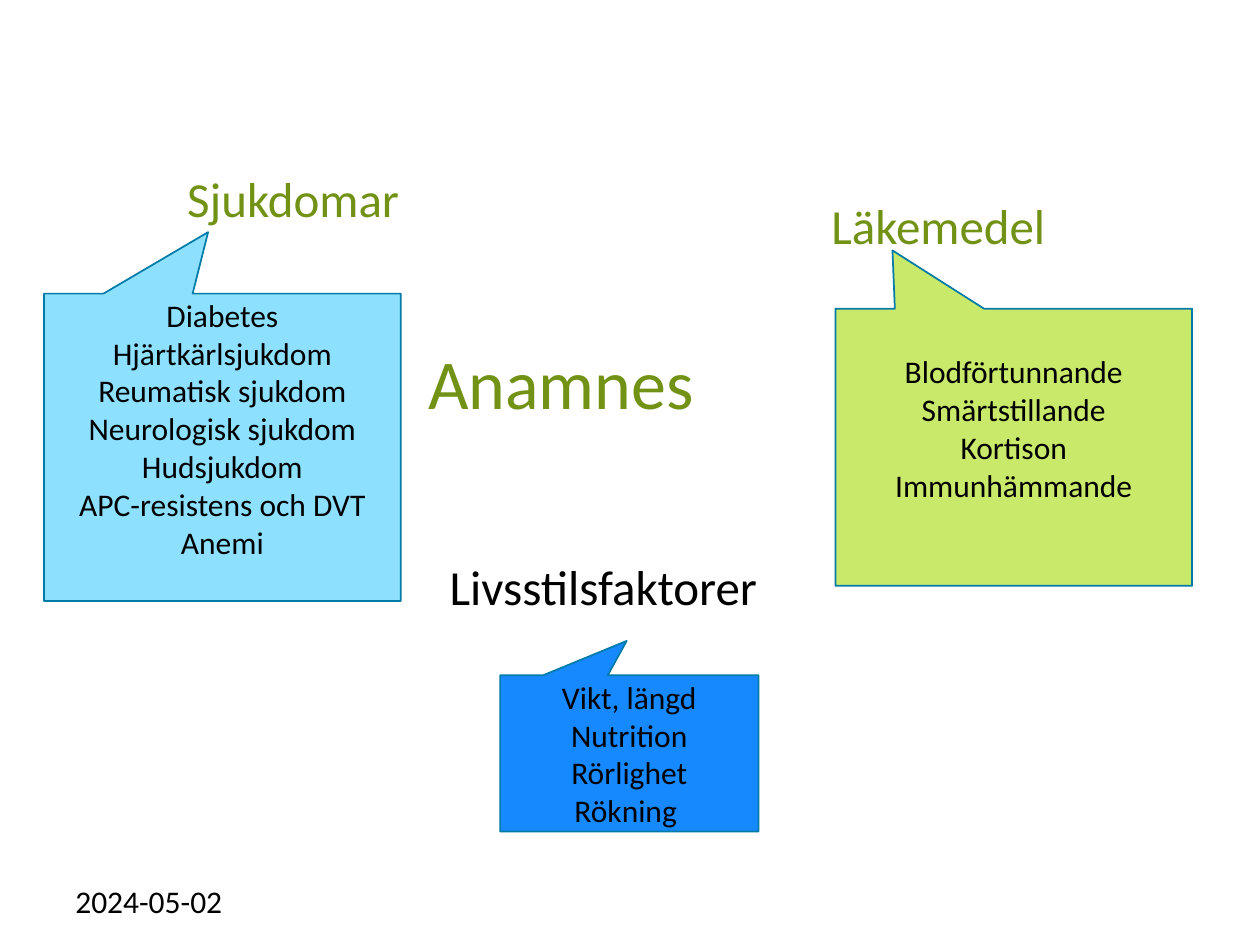
from pptx import Presentation
from pptx.dml.color import RGBColor
from pptx.enum.shapes import MSO_SHAPE
from pptx.enum.text import MSO_ANCHOR, PP_ALIGN
from pptx.util import Pt

COLORS = {
    "olive": "729216",
    "black": "000000",
    "edge": "007BA7",
    "sky": "8DE1FF",
    "lime": "C8E969",
    "blue": "1789FF",
}
FONT = "Calibri"
INSET, LINE = 3.6, 22

LABELS = [
    ("Anamnes", (237.6, 195.8, 232.6, 85), 40, "olive", PP_ALIGN.LEFT, MSO_ANCHOR.TOP, True),
    ("2024-05-02", (36, 500.4, 167.8, 28.8), 18, "black", PP_ALIGN.LEFT, MSO_ANCHOR.TOP, True),
    ("Sjukdomar", (59.8, 79.2, 215.3, 67.7), 28, "olive", PP_ALIGN.CENTER, MSO_ANCHOR.MIDDLE, True),
    ("Läkemedel", (468, 108, 137.5, 41), 28, "olive", PP_ALIGN.LEFT, MSO_ANCHOR.TOP, False),
    ("Livsstilsfaktorer", (249.8, 314.6, 215.3, 41), 28, "black", PP_ALIGN.LEFT, MSO_ANCHOR.TOP, True),
]
CALLOUTS = [
    (["Diabetes", "Hjärtkärlsjukdom", "Reumatisk sjukdom", "Neurologisk sjukdom",
      "Hudsjukdom", "APC-resistens och DVT", "Anemi"],
     (25.2, 167.8, 203.8, 175.7), (-0.04, -0.7), "sky", INSET + LINE),
    (["Blodförtunnande", "Smärtstillande", "Kortison", "Immunhämmande"],
     (477.4, 176.4, 203.8, 158.4), (-0.34, -0.71), "lime", INSET + LINE),
    (["Vikt, längd Nutrition", "Rörlighet", "Rökning "],
     (285.8, 385.9, 147.6, 89.3), (-0.01, -0.72), "blue", INSET),
]


def tint(name):
    return RGBColor.from_string(COLORS[name])


def style(frame, size, color, align):
    for para in frame.paragraphs:
        para.alignment = align
        for run in para.runs:
            run.font.name = FONT
            run.font.size = Pt(size)
            run.font.color.rgb = tint(color)


def label(slide, text, box, size, color, align, anchor, wrap):
    frame = slide.shapes.add_textbox(*map(Pt, box)).text_frame
    frame.word_wrap = wrap
    frame.vertical_anchor = anchor
    frame.text = text
    style(frame, size, color, align)
    return frame


def callout(slide, lines, box, tip, color, bottom):
    shape = slide.shapes.add_shape(MSO_SHAPE.RECTANGULAR_CALLOUT, *map(Pt, box))
    shape.adjustments[0], shape.adjustments[1] = tip
    shape.shadow.inherit = False
    shape.fill.solid()
    shape.fill.fore_color.rgb = tint(color)
    shape.line.color.rgb = tint("edge")
    shape.line.width = Pt(1)
    frame = shape.text_frame
    frame.word_wrap = True
    frame.vertical_anchor = MSO_ANCHOR.MIDDLE
    frame.margin_bottom = Pt(bottom)
    frame.text = "\n".join(lines)
    style(frame, 18, "black", PP_ALIGN.CENTER)


def main():
    deck = Presentation()
    deck.slide_width, deck.slide_height = Pt(720), Pt(540)
    slide = deck.slides.add_slide(deck.slide_layouts[6])
    frames = [label(slide, *item) for item in LABELS]
    frames[0].paragraphs[0].line_spacing = 0.9
    for item in CALLOUTS:
        callout(slide, *item)
    deck.save("out.pptx")


if __name__ == "__main__":
    main()
